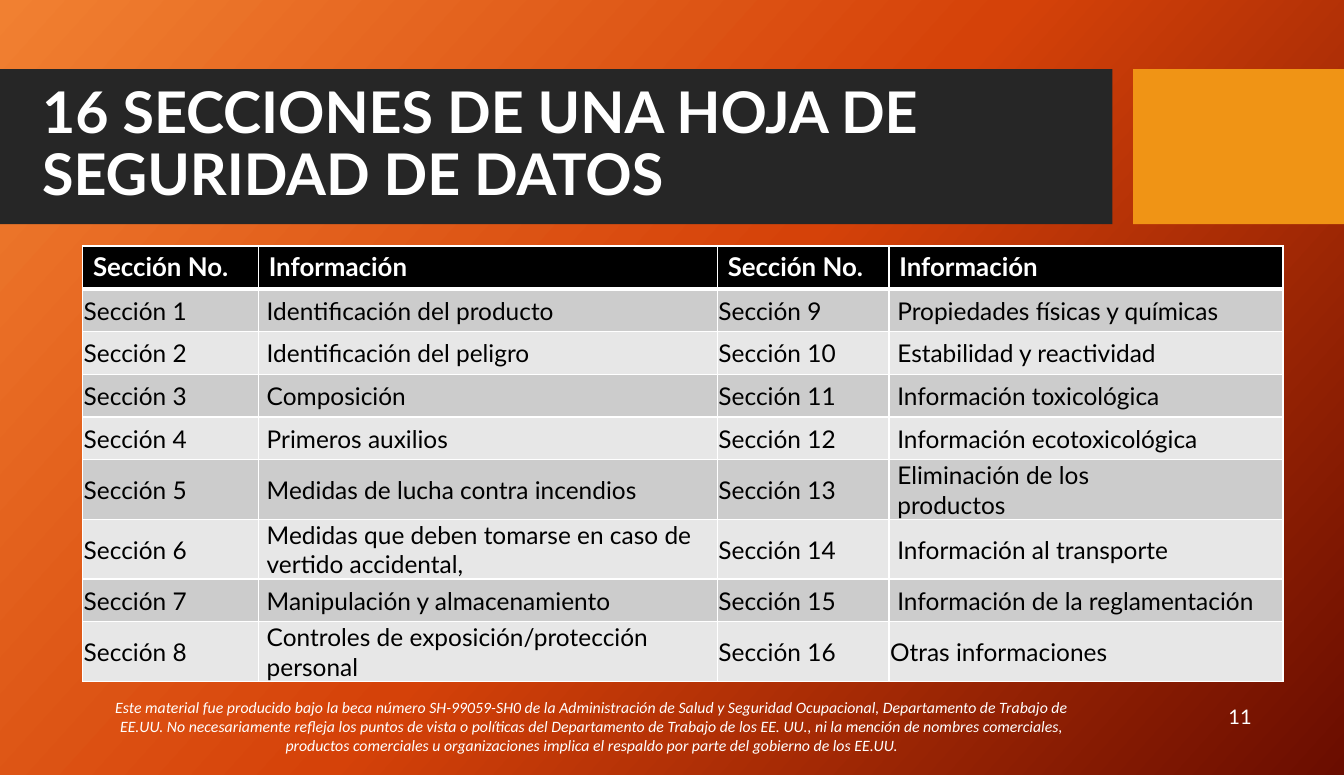
from copy import deepcopy
from dataclasses import dataclass

from lxml import etree
from pptx import Presentation
from pptx.dml.color import RGBColor
from pptx.enum.shapes import MSO_SHAPE
from pptx.enum.text import MSO_ANCHOR, PP_ALIGN
from pptx.oxml.ns import qn
from pptx.util import Inches, Pt

RECTANGLE = MSO_SHAPE.RECTANGLE
TOP, MIDDLE = MSO_ANCHOR.TOP, MSO_ANCHOR.MIDDLE
LEFT, CENTER = PP_ALIGN.LEFT, PP_ALIGN.CENTER
GRID_COLUMNS, GRID_ROWS = 130, 75

TITLE = "16 SECCIONES DE UNA HOJA DE SEGURIDAD DE DATOS"
HEADERS = ["Sección No.", "Información"] * 2
TOPICS = [
    "Identificación del producto",
    "Identificación del peligro",
    "Composición",
    "Primeros auxilios",
    "Medidas de lucha contra incendios",
    "Medidas que deben tomarse en caso de vertido accidental,",
    "Manipulación y almacenamiento",
    "Controles de exposición/protección personal",
    "Propiedades físicas y químicas",
    "Estabilidad y reactividad",
    "Información toxicológica",
    "Información ecotoxicológica",
    "Eliminación de los\nproductos",
    "Información al transporte",
    "Información de la reglamentación",
    "Otras informaciones",
]
DISCLAIMER = (
    "Este material fue producido bajo la beca número SH-99059-SH0 de la "
    "Administración de Salud y Seguridad Ocupacional, Departamento de Trabajo "
    "de EE.UU. No necesariamente refleja los puntos de vista o políticas del "
    "Departamento de Trabajo de los EE. UU., ni la mención de nombres "
    "comerciales, productos comerciales u organizaciones implica el respaldo "
    "por parte del gobierno de los EE.UU."
)


@dataclass(frozen=True)
class Theme:
    font: str = "Lato"
    note_font: str = "Calibri"
    light: str = "FFFFFF"
    dark: str = "000000"
    band: str = "262626"
    accent: str = "F09415"
    stripes: tuple = ("CCCCCC", "E7E7E7")
    gradient: tuple = ((0, "F18031"), (0.5, "D54209"), (1, "6A0D00"))
    gradient_angle: int = 318
    title_size: int = 40
    header_size: int = 18
    body_size: int = 17
    number_size: int = 14
    note_size: int = 11


class SlideBuilder:
    def __init__(self, presentation, theme):
        self.theme = theme
        self.width = presentation.slide_width
        self.height = presentation.slide_height
        self.slide = presentation.slides.add_slide(presentation.slide_layouts[6])

    def place(self, left, top, width, height):
        """Turn grid columns and rows into slide lengths."""
        column, row = self.width / GRID_COLUMNS, self.height / GRID_ROWS
        return [round(n) for n in (left * column, top * row, width * column, height * row)]

    def background(self):
        fill = self.slide.background.fill
        fill.gradient()
        fill.gradient_angle = self.theme.gradient_angle
        stop_list = next(self.slide.element.iter(qn("a:gsLst")))
        stop_list.append(deepcopy(stop_list[-1]))
        for stop, (position, color) in zip(fill.gradient_stops, self.theme.gradient):
            stop.position = position
            stop.color.rgb = RGBColor.from_string(color)

    def block(self, area, color):
        shape = self.slide.shapes.add_shape(RECTANGLE, *self.place(*area))
        shape.shadow.inherit = False
        shape.fill.solid()
        shape.fill.fore_color.rgb = RGBColor.from_string(color)
        shape.line.fill.background()

    def add_runs(self, paragraph, text, size, color, font=None, bold=False, italic=False):
        for index, line in enumerate(text.split("\n")):
            if index:
                paragraph.add_line_break()
            run = paragraph.add_run()
            run.text = line
            run.font.name = font or self.theme.font
            run.font.size = Pt(size)
            run.font.bold = bold
            run.font.italic = italic
            run.font.color.rgb = RGBColor.from_string(color)

    def text(self, area, text, size, align=LEFT, anchor=MIDDLE, spacing=1.0, **style):
        frame = self.slide.shapes.add_textbox(*self.place(*area)).text_frame
        frame.word_wrap = True
        frame.vertical_anchor = anchor
        paragraph = frame.paragraphs[0]
        paragraph.alignment = align
        paragraph.line_spacing = spacing
        self.add_runs(paragraph, text, size, self.theme.light, **style)

    def borders(self, cell, bottom=1, top=1):
        properties = cell._tc.get_or_add_tcPr()
        for side, points in (("L", 1), ("R", 1), ("T", top), ("B", bottom)):
            line = etree.SubElement(properties, qn(f"a:ln{side}"), w=str(Pt(points)))
            fill = etree.SubElement(line, qn("a:solidFill"))
            etree.SubElement(fill, qn("a:srgbClr"), val=self.theme.light)

    def fill_cell(self, cell, color):
        cell.fill.solid()
        cell.fill.fore_color.rgb = RGBColor.from_string(color)

    def header_cell(self, cell, text):
        self.borders(cell, bottom=3)
        self.fill_cell(cell, self.theme.dark)
        self.add_runs(cell.text_frame.paragraphs[0], text, self.theme.header_size,
                      self.theme.light, bold=True)

    def body_cell(self, cell, text, row, indent):
        self.borders(cell, top=3 if row == 1 else 1)
        self.fill_cell(cell, self.theme.stripes[(row - 1) % 2])
        cell.vertical_anchor = MIDDLE
        cell.margin_left = Inches(indent)
        cell.margin_top = cell.margin_right = Inches(0.01)
        cell.margin_bottom = 0
        self.add_runs(cell.text_frame.paragraphs[0], text, self.theme.body_size,
                      self.theme.dark)

    def section_table(self, left, top, widths, row_height, headers, topics):
        """Number the topics and list them in two halves side by side."""
        half = len(topics) // 2
        area = self.place(left, top, sum(widths), row_height * (half + 1))
        table = self.slide.shapes.add_table(half + 1, len(widths), *area).table
        table.horz_banding = False
        for column, width in zip(table.columns, widths):
            column.width = self.place(0, 0, width, 0)[2]
        for column, header in enumerate(headers):
            self.header_cell(table.cell(0, column), header)
        for index, topic in enumerate(topics):
            side, row = divmod(index, half)
            row += 1
            indent = 0.01 if index == len(topics) - 1 else 0.08
            self.body_cell(table.cell(row, 2 * side), f"Sección {index + 1}", row, 0.01)
            self.body_cell(table.cell(row, 2 * side + 1), topic, row, indent)


def main():
    presentation = Presentation()
    presentation.slide_width, presentation.slide_height = Inches(13), Inches(7.5)
    theme = Theme()
    builder = SlideBuilder(presentation, theme)
    builder.background()
    builder.block((0, 6.7, 107.6, 15), theme.band)
    builder.block((109.6, 6.7, 20.4, 15), theme.accent)
    builder.text((8.3, 67, 98, 6.6), DISCLAIMER, theme.note_size, align=CENTER,
                 anchor=TOP, font=theme.note_font, italic=True)
    builder.text((3.1, 8.2, 105.3, 11.8), TITLE, theme.title_size, spacing=0.9, bold=True)
    builder.text((114.9, 65.3, 10.1, 8), "11", theme.number_size, align=CENTER)
    builder.section_table(8, 23.8, (17, 44.4, 16.6, 38.1), 4.14, HEADERS, TOPICS)
    presentation.save("out.pptx")


if __name__ == "__main__":
    main()
